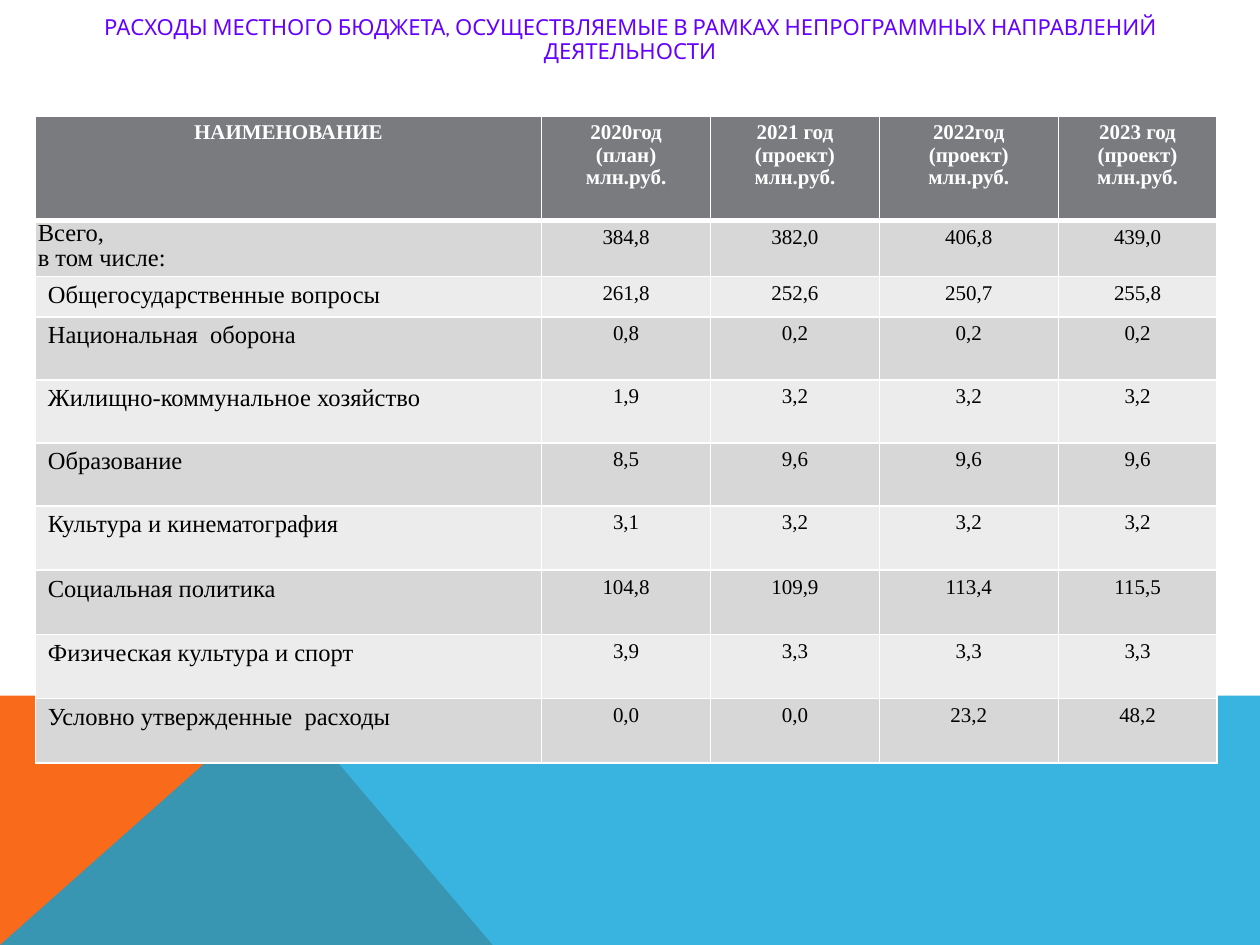
from lxml.etree import SubElement
from pptx import Presentation
from pptx.dml.color import RGBColor
from pptx.enum.text import MSO_ANCHOR, PP_ALIGN
from pptx.oxml.ns import qn
from pptx.util import Inches, Pt


def paint(fill, color):
    fill.solid()
    fill.fore_color.rgb = RGBColor.from_string(color)


def add_text(paragraph, text, font_name, size, color, bold=False):
    run = paragraph.add_run()
    run.text = text
    run.font.name = font_name
    run.font.size = Pt(size)
    run.font.bold = bold
    paint(run.font.fill, color)


presentation = Presentation()
presentation.slide_width = Inches(10)
presentation.slide_height = Inches(7.5)
slide = presentation.slides.add_slide(presentation.slide_layouts[6])

# Coloured bands at the foot of the slide
bands = [
    ("F96A1B", 100, [(0, 7.5), (0, 5.52), (2.23, 5.52), (3.91, 7.5)]),
    ("08A1D9", 80, [(0, 7.5), (2.23, 5.52), (10, 5.52), (10, 7.5)]),
]
for color, opacity, points in bands:
    corners = [(Inches(x), Inches(y)) for x, y in points]
    builder = slide.shapes.build_freeform(*corners[0])
    builder.add_line_segments(corners[1:], close=True)
    band = builder.convert_to_shape()
    band.shadow.inherit = False
    band.line.fill.background()
    paint(band.fill, color)
    if opacity < 100:
        color_element = band.fill._xPr.find(qn("a:solidFill"))[0]
        SubElement(color_element, qn("a:alpha"), val=str(opacity * 1000))

# Title
title = slide.shapes.add_textbox(Inches(0.5), Inches(0.13), Inches(9), Inches(0.63))
title_frame = title.text_frame
title_frame.word_wrap = True
title_frame.vertical_anchor = MSO_ANCHOR.TOP
title_frame.margin_top = title_frame.margin_bottom = 0
paragraph = title_frame.paragraphs[0]
paragraph.alignment = PP_ALIGN.CENTER
paragraph.line_spacing = 0.9
add_text(
    paragraph,
    "РАСХОДЫ МЕСТНОГО БЮДЖЕТА, ОСУЩЕСТВЛЯЕМЫЕ В РАМКАХ НЕПРОГРАММНЫХ НАПРАВЛЕНИЙ ДЕЯТЕЛЬНОСТИ",
    "Cabin", 12.6, "6600FF",
)

# Expenditure table
rows = [
    ["НАИМЕНОВАНИЕ", "2020год\n(план)\nмлн.руб.", "2021 год\n(проект)\nмлн.руб.",
     "2022год\n(проект)\nмлн.руб.", "2023 год\n(проект)\nмлн.руб."],
    ["Всего,\nв том числе:", "384,8", "382,0", "406,8", "439,0"],
    ["Общегосударственные вопросы", "261,8", "252,6", "250,7", "255,8"],
    ["Национальная  оборона", "0,8", "0,2", "0,2", "0,2"],
    ["Жилищно-коммунальное хозяйство", "1,9", "3,2", "3,2", "3,2"],
    ["Образование", "8,5", "9,6", "9,6", "9,6"],
    ["Культура и кинематография", "3,1", "3,2", "3,2", "3,2"],
    ["Социальная политика", "104,8", "109,9", "113,4", "115,5"],
    ["Физическая культура и спорт", "3,9", "3,3", "3,3", "3,3"],
    ["Условно утвержденные  расходы", "0,0", "0,0", "23,2", "48,2"],
]
column_widths = [4.02, 1.34, 1.34, 1.42, 1.26]
row_heights = [0.83, 0.44, 0.31] + [0.5] * 3 + [0.51] * 4
table = slide.shapes.add_table(
    len(rows), len(column_widths), Inches(0.28), Inches(0.92),
    Inches(sum(column_widths)), Inches(sum(row_heights)),
).table
for column, width in zip(table.columns, column_widths):
    column.width = Inches(width)
for table_row, height in zip(table.rows, row_heights):
    table_row.height = Inches(height)

for row_index, row in enumerate(rows):
    is_header = row_index == 0
    for column_index, text in enumerate(row):
        cell = table.cell(row_index, column_index)
        is_name = column_index == 0 and not is_header
        for line_index, line in enumerate(text.split("\n")):
            frame = cell.text_frame
            paragraph = frame.add_paragraph() if line_index else frame.paragraphs[0]
            paragraph.alignment = PP_ALIGN.LEFT if is_name else PP_ALIGN.CENTER
            paragraph.line_spacing = 0.95
            add_text(paragraph, line, "Times New Roman", 14 if is_name else 12,
                     "FFFFFF" if is_header else "000000", is_header)

        # Borders come before the fill in the cell properties
        properties = cell._tc.get_or_add_tcPr()
        for side in ("L", "R", "T", "B"):
            under_header = (row_index, side) in ((0, "B"), (1, "T"))
            border = SubElement(properties, qn(f"a:ln{side}"),
                                w=str(Pt(3 if under_header else 1)))
            border_fill = SubElement(border, qn("a:solidFill"))
            SubElement(border_fill, qn("a:srgbClr"), val="FFFFFF")
        paint(cell.fill, "797B7E" if is_header else ("ECECEC", "D7D7D8")[row_index % 2])

total_cell = table.cell(1, 0)
total_cell.margin_left = total_cell.margin_right = Inches(0.02)
total_cell.margin_top = total_cell.margin_bottom = 0

presentation.save("out.pptx")
